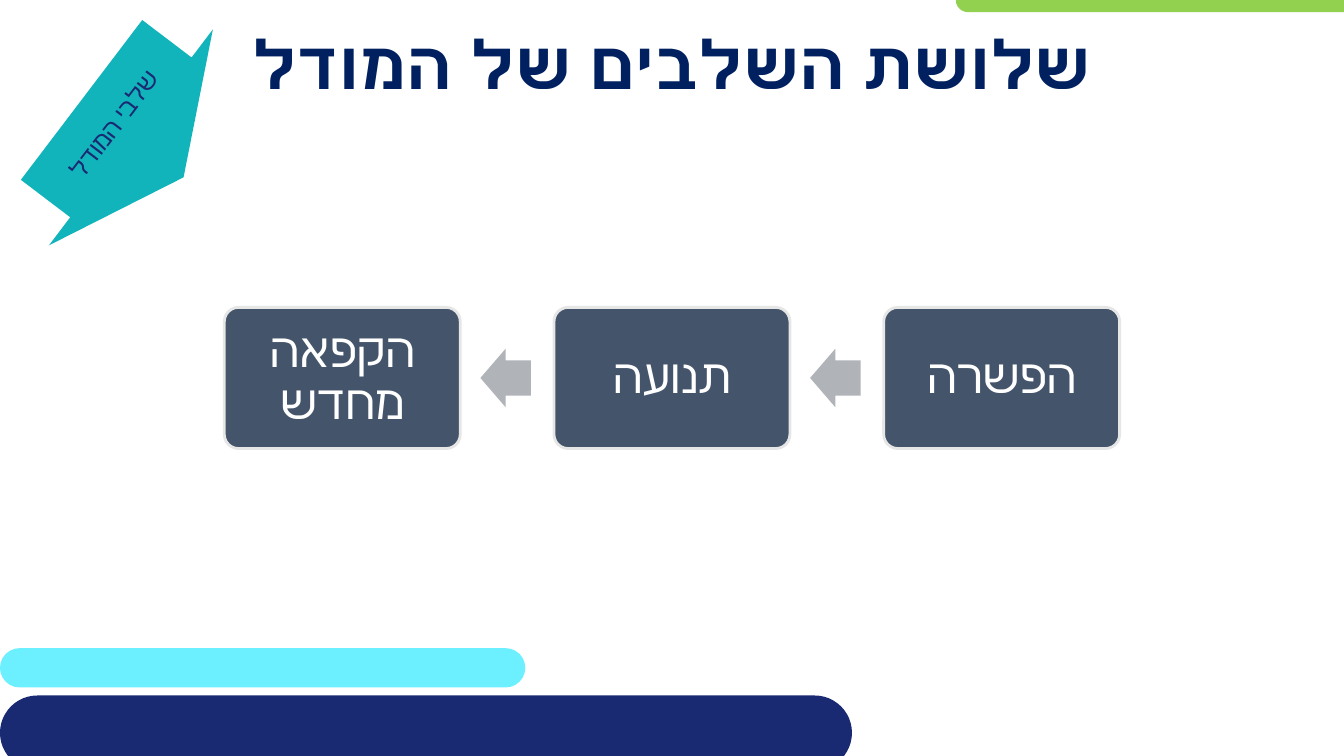
from pptx import Presentation
from pptx.dml.color import RGBColor
from pptx.enum.shapes import MSO_SHAPE
from pptx.enum.text import MSO_ANCHOR, PP_ALIGN
from pptx.util import Inches, Pt
from lxml import etree

ROUNDED = MSO_SHAPE.ROUNDED_RECTANGLE
DOWN_ARROW = MSO_SHAPE.DOWN_ARROW
LEFT_ARROW = MSO_SHAPE.LEFT_ARROW
MIDDLE = MSO_ANCHOR.MIDDLE
CENTER = PP_ALIGN.CENTER

CYAN = RGBColor(0x6C, 0xF0, 0xFF)
GREEN = RGBColor(0x92, 0xD0, 0x50)
NAVY = RGBColor(0x19, 0x2A, 0x72)
TITLE_BLUE = RGBColor(0x00, 0x20, 0x60)
TEAL = RGBColor(0x12, 0xB4, 0xBC)
SLATE = RGBColor(0x44, 0x54, 0x6A)
PALE_GRAY = RGBColor(0xE7, 0xE6, 0xE6)
ARROW_GRAY = RGBColor(0xB0, 0xB4, 0xB9)
WHITE = RGBColor(0xFF, 0xFF, 0xFF)
FONT = "League Spartan"
DRAWING = "{http://schemas.openxmlformats.org/drawingml/2006/main}"

SLIDE_WIDTH, SLIDE_HEIGHT = 13.33, 7.5
CARD_WIDTH, CARD_HEIGHT = 2.34, 1.4
CARD_PITCH = 3.27
ARROW_WIDTH, ARROW_HEIGHT = 0.5, 0.58
MARGIN = Inches(0.14)

presentation = Presentation()
presentation.slide_width = Inches(SLIDE_WIDTH)
presentation.slide_height = Inches(SLIDE_HEIGHT)
slide = presentation.slides.add_slide(presentation.slide_layouts[6])


def add_filled(kind, left, top, width, height, color, adjustments):
    shape = slide.shapes.add_shape(
        kind, Inches(left), Inches(top), Inches(width), Inches(height))
    shape.shadow.inherit = False
    shape.fill.solid()
    shape.fill.fore_color.rgb = color
    shape.line.fill.background()
    for index, value in enumerate(adjustments):
        shape.adjustments[index] = value
    return shape


def write_hebrew(shape, text, size, color, bold=False):
    frame = shape.text_frame
    frame.word_wrap = True
    frame.vertical_anchor = MIDDLE
    frame.text = text
    paragraph = frame.paragraphs[0]
    paragraph.alignment = CENTER
    paragraph._p.get_or_add_pPr().set("rtl", "1")
    run = paragraph.runs[0]
    run.font.name = FONT
    run.font.size = Pt(size)
    run.font.bold = bold
    run.font.color.rgb = color
    etree.SubElement(run._r.get_or_add_rPr(), DRAWING + "cs", typeface=FONT)
    return paragraph


for left, top, width, height, color in (
    (0, 6.43, 5.21, 0.39, CYAN),
    (9.48, -0.12, 5.8, 0.24, GREEN),
    (0, 6.9, 8.45, 0.74, NAVY),
):
    add_filled(ROUNDED, left, top, width, height, color, [0.5])

title = slide.shapes.add_textbox(
    0, Inches(0.23), Inches(SLIDE_WIDTH), Inches(0.79))
write_hebrew(title, "שלושת השלבים של המודל", 48, TITLE_BLUE, bold=True)

stage_banner = add_filled(DOWN_ARROW, -0.03, 0.74, 2.69, 1.27, TEAL, [0.74, 0.516])
stage_banner.rotation = 307.2
write_hebrew(stage_banner, "שלבי המודל", 18, NAVY)

card_top = SLIDE_HEIGHT / 2 - CARD_HEIGHT / 2
first_left = SLIDE_WIDTH / 2 - CARD_WIDTH / 2 + CARD_PITCH
stages = ("הפשרה", "תנועה", "הקפאה מחדש")
for index, stage in enumerate(stages):
    card_left = first_left - index * CARD_PITCH
    card = add_filled(ROUNDED, card_left, card_top, CARD_WIDTH, CARD_HEIGHT, SLATE, [0.1])
    card.line.color.rgb = PALE_GRAY
    card.line.width = Pt(2)
    frame = card.text_frame
    frame.margin_left = frame.margin_right = MARGIN
    frame.margin_top = frame.margin_bottom = MARGIN
    write_hebrew(card, stage, 34, WHITE).line_spacing = 0.9
    if index < len(stages) - 1:
        add_filled(LEFT_ARROW, card_left - 0.73, SLIDE_HEIGHT / 2 - ARROW_HEIGHT / 2,
                   ARROW_WIDTH, ARROW_HEIGHT, ARROW_GRAY, [0.6, 0.5])

presentation.save("out.pptx")
